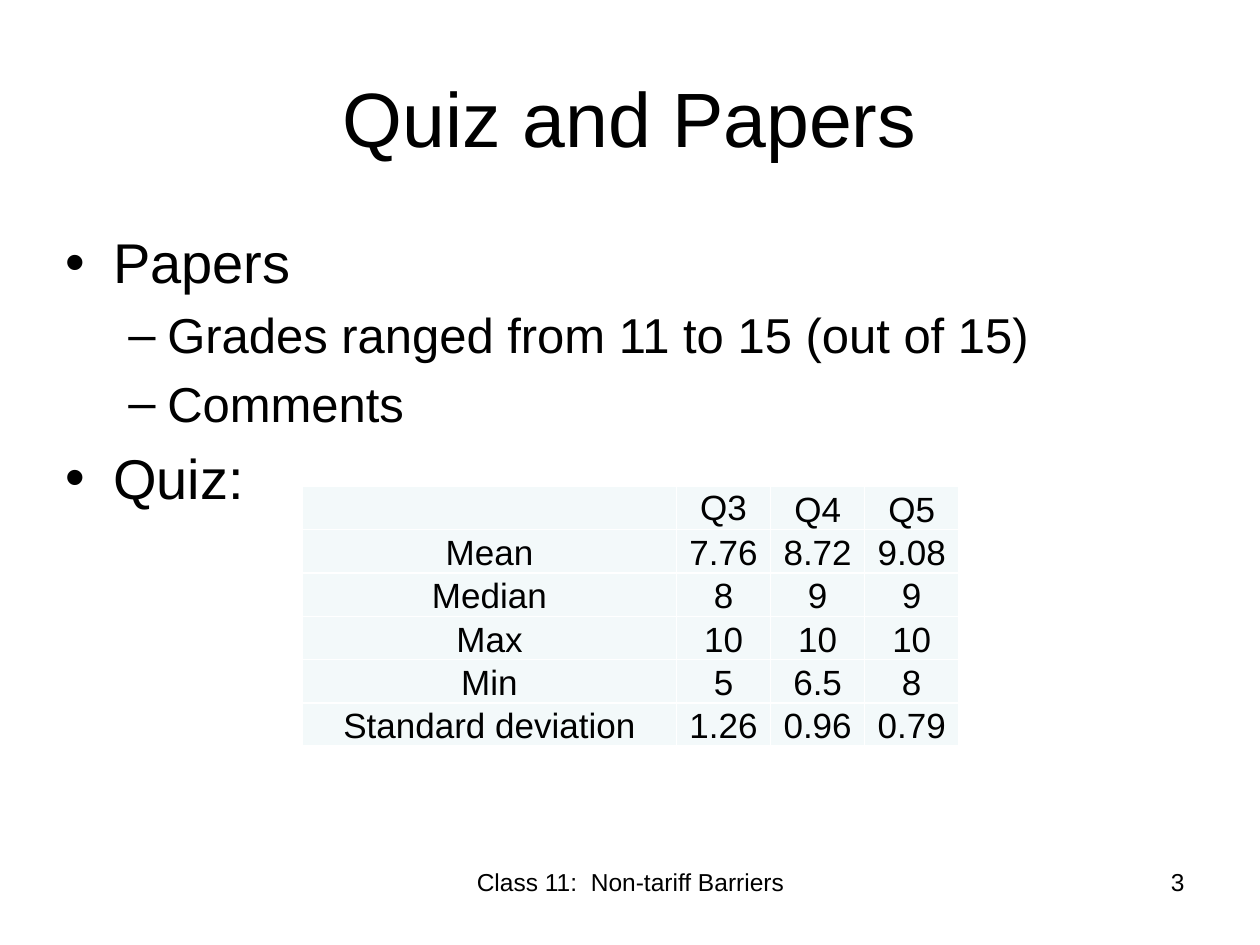
from dataclasses import dataclass

from lxml.etree import SubElement
from pptx import Presentation
from pptx.dml.color import RGBColor
from pptx.enum.text import MSO_ANCHOR, PP_ALIGN
from pptx.oxml.ns import qn
from pptx.util import Emu, Inches, Pt


@dataclass(frozen=True)
class Theme:
    """Fonts, colours and type sizes of the slide."""
    font: str = "Arial"
    ink: RGBColor = RGBColor(0, 0, 0)
    cell: RGBColor = RGBColor(0xF3, 0xF9, 0xFA)
    rule: str = "FFFFFF"
    title: int = 44
    levels: tuple = (32, 28)
    table: int = 20
    footer: int = 14


THEME = Theme()
WIDTH, HEIGHT = Inches(10), Inches(7.5)
BULLETS = (("•", 0.38, -0.38), ("–", 0.81, -0.31))
OUTLINE = (
    (0, "Papers"),
    (1, "Grades ranged from 11 to 15 (out of 15)"),
    (1, "Comments"),
    (0, "Quiz:"),
)
STATISTICS = (
    ("", "Q3", "Q4", "Q5"),
    ("Mean", "7.76", "8.72", "9.08"),
    ("Median", "8", "9", "9"),
    ("Max", "10", "10", "10"),
    ("Min", "5", "6.5", "8"),
    ("Standard deviation", "1.26", "0.96", "0.79"),
)
COLUMN_SHARES = (0.57, 0.1433, 0.1433, 0.1434)
ROW_SHARES = (0.175,) + (0.165,) * 5


def area(left, top, width, height):
    """Turn inches on the slide into a box of lengths."""
    return Inches(left), Inches(top), Inches(width), Inches(height)


def write(paragraph, text, size, align=PP_ALIGN.LEFT):
    """Add one styled run to a paragraph."""
    paragraph.alignment = align
    run = paragraph.add_run()
    run.text = text
    run.font.name = THEME.font
    run.font.size = Pt(size)
    run.font.color.rgb = THEME.ink


def add_title(slide, box, text):
    """Place and fill the title placeholder."""
    title = slide.shapes.title
    title.left, title.top, title.width, title.height = box
    title.text_frame.vertical_anchor = MSO_ANCHOR.MIDDLE
    write(title.text_frame.paragraphs[0], text, THEME.title, PP_ALIGN.CENTER)


def set_bullet(paragraph, level):
    """Give a paragraph its level, indents, spacing and bullet."""
    mark, margin, indent = BULLETS[level]
    paragraph.level = level
    properties = paragraph._p.get_or_add_pPr()
    properties.set("marL", str(Inches(margin)))
    properties.set("indent", str(Inches(indent)))
    before = SubElement(properties, qn("a:spcBef"))
    SubElement(before, qn("a:spcPct"), val="20000")
    SubElement(properties, qn("a:buFont"), typeface=THEME.font)
    SubElement(properties, qn("a:buChar"), char=mark)


def add_outline(slide, box, items):
    """Write the bulleted outline."""
    frame = slide.shapes.add_textbox(*box).text_frame
    frame.word_wrap = True
    for index, (level, text) in enumerate(items):
        paragraph = frame.add_paragraph() if index else frame.paragraphs[0]
        set_bullet(paragraph, level)
        write(paragraph, text, THEME.levels[level])


def format_cell(cell, text, anchor):
    """Fill, rule and write one table cell."""
    cell.margin_left = cell.margin_right = cell.margin_top = Inches(0.01)
    cell.margin_bottom = 0
    cell.vertical_anchor = anchor
    properties = cell._tc.get_or_add_tcPr()
    for side in ("lnL", "lnR", "lnT", "lnB"):
        line = SubElement(properties, qn(f"a:{side}"), w=str(Pt(1)))
        fill = SubElement(line, qn("a:solidFill"))
        SubElement(fill, qn("a:srgbClr"), val=THEME.rule)
    cell.fill.solid()
    cell.fill.fore_color.rgb = THEME.cell
    if text:
        write(cell.text_frame.paragraphs[0], text, THEME.table, PP_ALIGN.CENTER)


def add_statistics(slide, box, records):
    """Build the table of quiz statistics."""
    table = slide.shapes.add_table(len(records), len(records[0]), *box).table
    table.first_row = table.horz_banding = False
    for column, share in zip(table.columns, COLUMN_SHARES):
        column.width = Emu(int(box[2] * share))
    for row, share, record in zip(table.rows, ROW_SHARES, records):
        row.height = Emu(int(box[3] * share))
        for cell, text in zip(row.cells, record):
            anchor = MSO_ANCHOR.MIDDLE if text == "Q3" else MSO_ANCHOR.BOTTOM
            format_cell(cell, text, anchor)


def add_footer(slide, box, text, align):
    """Write one part of the footer."""
    frame = slide.shapes.add_textbox(*box).text_frame
    frame.word_wrap = True
    write(frame.paragraphs[0], text, THEME.footer, align)


def main():
    """Build the slide and save it."""
    deck = Presentation()
    deck.slide_width, deck.slide_height = WIDTH, HEIGHT
    slide = deck.slides.add_slide(deck.slide_layouts[5])
    add_title(slide, area(0.5, 0.3, 9, 1.25), "Quiz and Papers")
    add_outline(slide, area(0.42, 1.76, 9, 4.95), OUTLINE)
    add_footer(slide, area(3.42, 6.83, 3.17, 0.52),
               "Class 11:  Non-tariff Barriers", PP_ALIGN.CENTER)
    add_footer(slide, area(7.17, 6.83, 2.33, 0.52), "3", PP_ALIGN.RIGHT)
    add_statistics(slide, area(2.4, 3.86, 5.21, 1.94), STATISTICS)
    deck.save("out.pptx")


if __name__ == "__main__":
    main()
